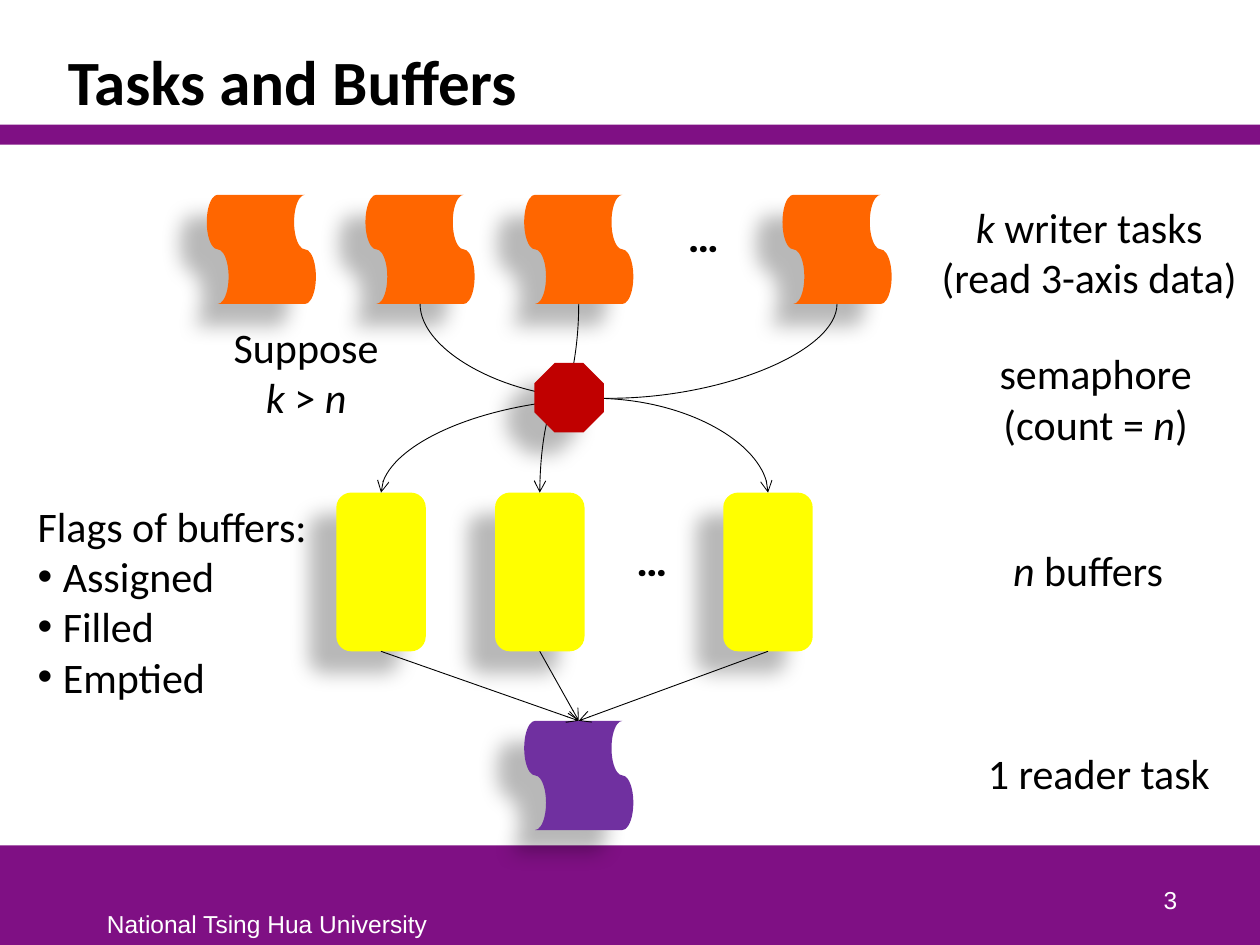
from lxml import etree
from pptx import Presentation
from pptx.dml.color import RGBColor
from pptx.enum.shapes import MSO_CONNECTOR, MSO_SHAPE
from pptx.enum.text import MSO_ANCHOR, PP_ALIGN
from pptx.oxml import parse_xml
from pptx.oxml.ns import nsdecls, qn
from pptx.util import Pt

LEFT, CENTER, RIGHT = PP_ALIGN.LEFT, PP_ALIGN.CENTER, PP_ALIGN.RIGHT
TOP, BOTTOM = MSO_ANCHOR.TOP, MSO_ANCHOR.BOTTOM
STRAIGHT, CURVE = MSO_CONNECTOR.STRAIGHT, MSO_CONNECTOR.CURVE
RECTANGLE, OCTAGON = MSO_SHAPE.RECTANGLE, MSO_SHAPE.OCTAGON
TAPE, ROUNDED = MSO_SHAPE.FLOWCHART_PUNCHED_TAPE, MSO_SHAPE.FLOWCHART_ALTERNATE_PROCESS

PURPLE, ORANGE, YELLOW = "7F1084", "FF6600", "FFFF00"
VIOLET, RED, BLACK, WHITE = "7030A0", "C00000", "000000", "FFFFFF"

BARS = [(0, 483.1, 720, 56.9), (0, 71.3, 720, 11.4)]

TASK_SIZE, WRITER_TOP, READER_TOP = 62.4, 111.3, 411.9
WRITER_LEFTS = [118.1, 208.8, 299.5, 447.1]
READER_LEFT = WRITER_LEFTS[2]
BUFFER_LEFTS, BUFFER_TOP = [192.2, 282.9, 413.3], 281.5
BUFFER_WIDTH, BUFFER_HEIGHT = 51.1, 90.7
SEMAPHORE_LEFT, SEMAPHORE_TOP, SEMAPHORE_SIZE = 305.3, 207.4, 39.7
WRITER_TO_BUFFER = [(1, 2), (2, 1), (3, 0)]

# Each line is a list of (text, italic) runs.
LABELS = [
    ((529.9, 111.6, 185, 65.4), [[("k", True), (" writer tasks", False)],
                                 [("(read 3-axis data)", False)]]),
    ((556.6, 423.4, 142.6, 36.4), [[("1 reader task", False)]]),
    ((571, 307.4, 101.5, 36.4), [[("n ", True), ("buffers", False)]]),
    ((563.8, 195.1, 124.6, 65.4), [[("semaphore", False)],
                                   [("(count = ", False), ("n", True), (")", False)]]),
    ((126, 180, 97.9, 65.4), [[("Suppose", False)],
                              [("k", True), (" > ", False), ("n", True)]]),
]
FLAGS_TITLE, FLAGS = "Flags of buffers:", ["Assigned", "Filled", "Emptied"]
FLAGS_BOX = (14.4, 282.2, 170.6, 123.8)
ELLIPSES = [(385.9, 116.6, 38.9, 36.4), (356.4, 301.7, 38.9, 36.4)]


def color(value):
    return RGBColor.from_string(value)


def add_text(slide, box, lines, size=24, font="Calibri", fill=BLACK, bold=False,
             align=LEFT, anchor=TOP, wrap=False):
    shape = slide.shapes.add_textbox(*map(Pt, box))
    frame = shape.text_frame
    frame.word_wrap = wrap
    frame.vertical_anchor = anchor
    frame.text = "\n".join("".join(text for text, _ in line) for line in lines)
    for paragraph, line in zip(frame.paragraphs, lines):
        paragraph.alignment = align
        paragraph.runs[0].text = line[0][0]
        for text, _ in line[1:]:
            paragraph.add_run().text = text
        for run, (_, italic) in zip(paragraph.runs, line):
            run.font.size, run.font.name = Pt(size), font
            run.font.bold, run.font.italic = bold, italic
            run.font.color.rgb = color(fill)
    return frame


def add_block(slide, kind, box, fill, rotation=0, shadow=True):
    shape = slide.shapes.add_shape(kind, *map(Pt, box))
    shape.rotation = rotation
    shape.fill.solid()
    shape.fill.fore_color.rgb = color(fill)
    shape.line.fill.background()
    shape.shadow.inherit = False
    if shadow:
        effects = shape._element.spPr.find(qn("a:effectLst"))
        effects.append(parse_xml(
            f'<a:outerShdw {nsdecls("a")} blurRad="{Pt(11.8)}" dist="{Pt(19.7)}" '
            f'dir="{141 * 60000}" algn="ctr" rotWithShape="0">'
            '<a:srgbClr val="000000"><a:alpha val="28000"/></a:srgbClr></a:outerShdw>'))


def add_arrow(slide, kind, start, end):
    connector = slide.shapes.add_connector(kind, *map(Pt, start + end))
    connector.line.width = Pt(0.5)
    connector.line.color.rgb = color(BLACK)
    properties = connector._element.spPr
    line = properties.find(qn("a:ln"))
    etree.SubElement(line, qn("a:tailEnd"), type="arrow")
    etree.SubElement(properties, qn("a:effectLst"))
    return connector


def add_downward_curve(slide, start, end):
    """Add an S-curve that leaves and arrives vertically, by turning a sideways one."""
    length, spread = end[1] - start[1], abs(end[0] - start[0])
    middle_x, middle_y = (start[0] + end[0]) / 2, (start[1] + end[1]) / 2
    left, right = middle_x - length / 2, middle_x + length / 2
    top, bottom = middle_y - spread / 2, middle_y + spread / 2
    rightward = end[0] > start[0]
    if rightward:
        left, right = right, left
    connector = add_arrow(slide, CURVE, (left, top), (right, bottom))
    turn = 270 if rightward else 90
    connector._element.spPr.find(qn("a:xfrm")).set("rot", str(turn * 60000))


def add_flags(slide):
    lines = [[(text, False)] for text in [FLAGS_TITLE] + FLAGS]
    frame = add_text(slide, FLAGS_BOX, lines)
    for paragraph in frame.paragraphs[1:]:
        properties = paragraph._p.get_or_add_pPr()
        properties.set("marL", str(Pt(14.4)))
        properties.set("indent", str(-Pt(14.4)))
        etree.SubElement(properties, qn("a:buFont"), typeface="Arial")
        etree.SubElement(properties, qn("a:buChar"), char="•")


def main():
    presentation = Presentation()
    presentation.slide_width, presentation.slide_height = Pt(720), Pt(540)
    slide = presentation.slides.add_slide(presentation.slide_layouts[6])

    for bar in BARS:
        add_block(slide, RECTANGLE, bar, PURPLE, shadow=False)
    add_text(slide, (54, 516.2, 198.7, 23.8), [[("National Tsing Hua University", False)]],
             size=14, font="Arial", fill=WHITE)
    title = add_text(slide, (31.7, 18, 645.8, 53.3), [[("Tasks and Buffers", False)]],
                     size=36, bold=True, anchor=BOTTOM, wrap=True)
    title.paragraphs[0].line_spacing = 0.85
    add_text(slide, (529.9, 490.3, 149.8, 36), [[("3", False)]], size=14, font="Arial",
             fill=WHITE, align=RIGHT, anchor=BOTTOM, wrap=True)

    tasks = [(left, WRITER_TOP, ORANGE) for left in WRITER_LEFTS]
    tasks.append((READER_LEFT, READER_TOP, VIOLET))
    for left, top, fill in tasks:
        add_block(slide, TAPE, (left, top, TASK_SIZE, TASK_SIZE), fill, rotation=90)
    for left in BUFFER_LEFTS:
        add_block(slide, ROUNDED, (left, BUFFER_TOP, BUFFER_WIDTH, BUFFER_HEIGHT), YELLOW)

    writer_centers = [left + TASK_SIZE / 2 for left in WRITER_LEFTS]
    buffer_centers = [left + BUFFER_WIDTH / 2 for left in BUFFER_LEFTS]
    reader_entry = (READER_LEFT + TASK_SIZE / 2, READER_TOP)
    for center in buffer_centers:
        add_arrow(slide, STRAIGHT, (center, BUFFER_TOP + BUFFER_HEIGHT), reader_entry)
    for writer, buffer in WRITER_TO_BUFFER:
        add_downward_curve(slide, (writer_centers[writer], WRITER_TOP + TASK_SIZE),
                           (buffer_centers[buffer], BUFFER_TOP))
    add_block(slide, OCTAGON,
              (SEMAPHORE_LEFT, SEMAPHORE_TOP, SEMAPHORE_SIZE, SEMAPHORE_SIZE), RED)

    for box in ELLIPSES:
        add_text(slide, box, [[("…", False)]], font="Roboto", bold=True)
    for box, lines in LABELS:
        add_text(slide, box, lines, align=CENTER)
    add_flags(slide)

    presentation.save("out.pptx")


if __name__ == "__main__":
    main()
